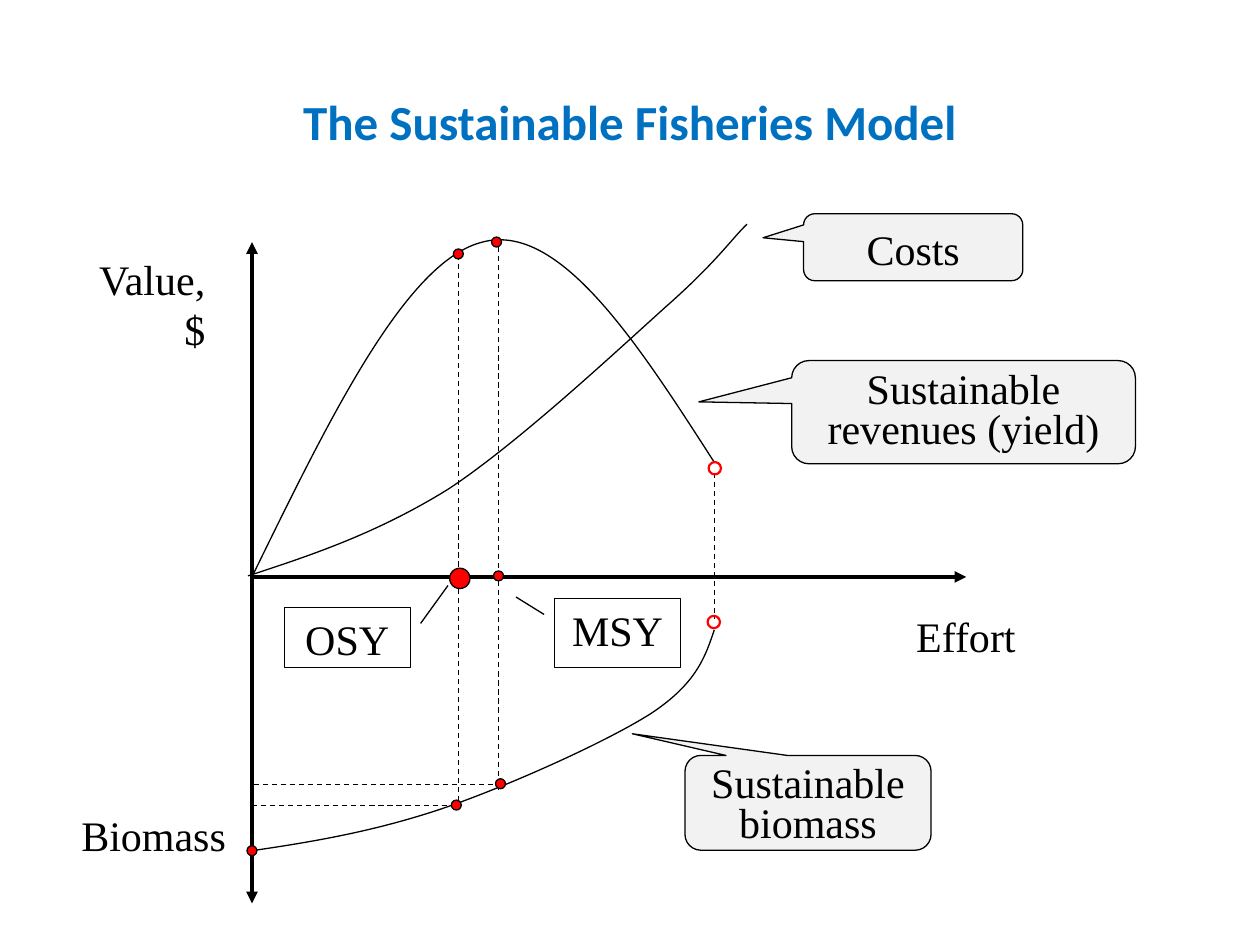
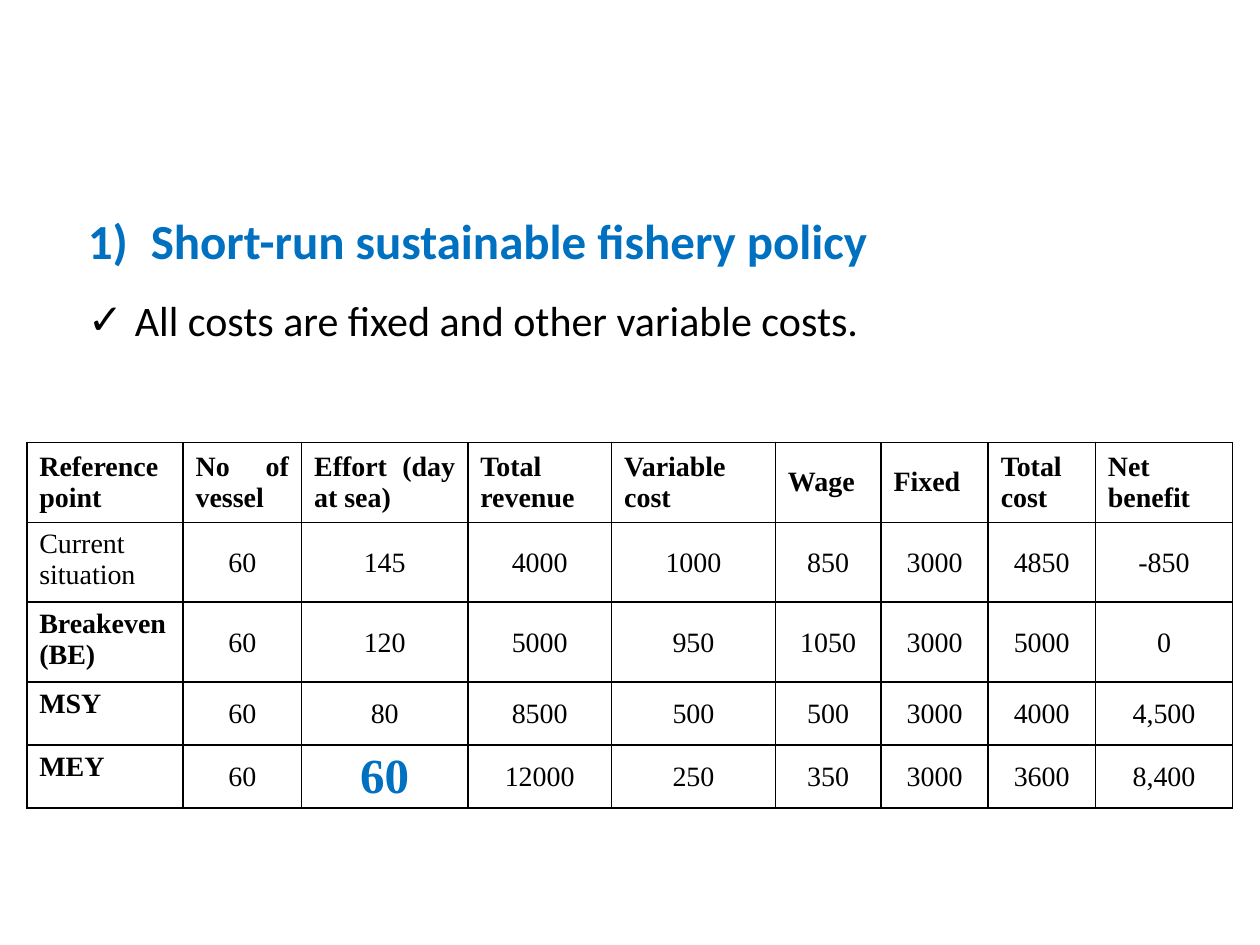
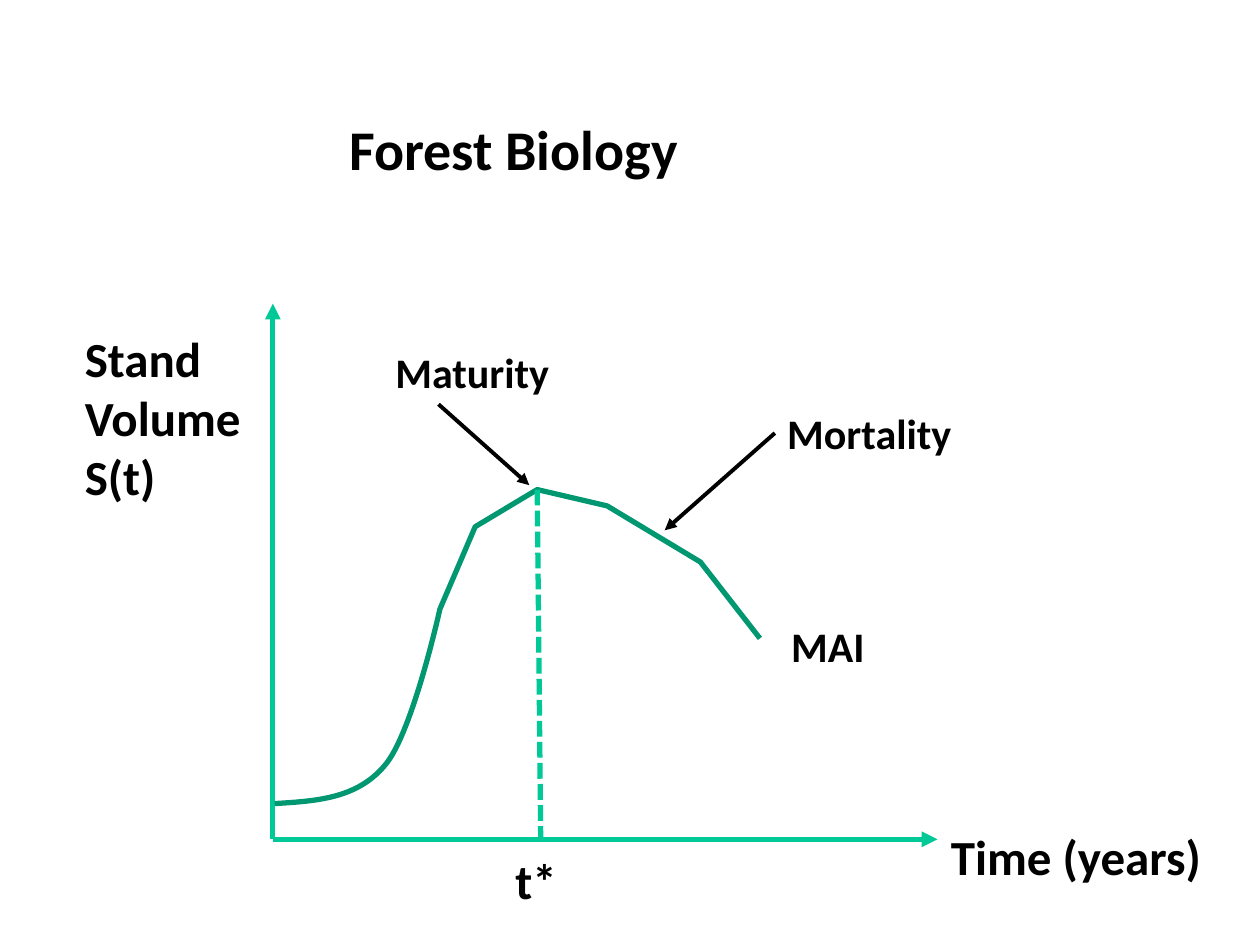
from pptx import Presentation
from pptx.dml.color import RGBColor
from pptx.enum.dml import MSO_LINE
from pptx.enum.shapes import MSO_CONNECTOR, MSO_SHAPE
from pptx.enum.text import MSO_ANCHOR, PP_ALIGN
from pptx.oxml import parse_xml
from pptx.oxml.ns import nsdecls, qn
from pptx.util import Cm, Pt

BLACK = RGBColor(0x00, 0x00, 0x00)
WHITE = RGBColor(0xFF, 0xFF, 0xFF)
BLUE = RGBColor(0x00, 0x70, 0xC0)
RED = RGBColor(0xFF, 0x00, 0x00)
PALE_GREY = RGBColor(0xF2, 0xF2, 0xF2)
AXIS_GREEN = RGBColor(0x00, 0xC8, 0x96)
CURVE_GREEN = RGBColor(0x00, 0x97, 0x71)
SANS = "Calibri"
SERIF = "Times New Roman"

# All places and sizes are in centimetres.
# Fisheries model
EFFORT_AXIS_Y, VALUE_AXIS_X = 11.63, 5.08
OSY_X, MSY_X, COLLAPSE_X = 9.24, 10.05, 14.4
FISHERY_LABELS = [
    (["Value,", "$"], (1.65, 4.98, 2.74, 2.29), PP_ALIGN.RIGHT),
    (["Effort"], (18.22, 12.19, 2.54, 1.27), PP_ALIGN.LEFT),
    (["Biomass"], (1.39, 16.2, 3.43, 1.27), PP_ALIGN.LEFT),
]
# A curve is its start, then segments: one point is straight, three are a Bézier.
REVENUE_CURVE = [
    (VALUE_AXIS_X, EFFORT_AXIS_Y),
    [(6.63, 8.46), (8.18, 5.26), (9.73, 4.88)],
    [(11.28, 4.47), (12.85, 6.91), (COLLAPSE_X, 9.32)],
]
BIOMASS_CURVE = [
    (VALUE_AXIS_X, 17.15),
    [(6.32, 16.97), (7.54, 16.76), (8.89, 16.31)],
    [(10.24, 15.85), (12.22, 14.96), (13.13, 14.38)],
    [(14.05, 13.77), (14.22, 13.23), (COLLAPSE_X, 12.7)],
]
COST_CURVE = [
    (5, 11.61),
    [(6.32, 11.18), (7.62, 10.74), (9.04, 9.86)],
    [(10.44, 8.94), (12.45, 7.06), (13.44, 6.17)],
    [(14.45, 5.28), (14.78, 4.78), (15.06, 4.52)],
]
GUIDES = [
    ((COLLAPSE_X, 9.53), (COLLAPSE_X, 12.47)),
    ((MSY_X, 4.98), (MSY_X, 15.93)),
    ((OSY_X, 5.13), (OSY_X, 16.21)),
    ((5.11, 15.82), (10.01, 15.82)),
    ((VALUE_AXIS_X, 16.24), (OSY_X, 16.24)),
]
COLLAPSE_RINGS = [(14.41, 9.44), (14.39, 12.54)]
DOTS = [(10.01, 4.88), (10.09, 15.8), (5.08, 17.15), (9.2, 16.23),
        (9.24, 5.12), (MSY_X, 11.61)]
OSY_DOT = (9.27, 11.66)
WEDGE, LEADER = MSO_SHAPE.ROUNDED_RECTANGULAR_CALLOUT, MSO_SHAPE.LINE_CALLOUT_1
CALLOUTS = [
    (WEDGE, ["Costs"], (16.2, 4.31, 4.42, 1.35), (-0.685, -0.141, 0.167)),
    (WEDGE, ["Sustainable", "revenues (yield)"], (15.96, 7.27, 6.93, 2.08),
     (-0.77, -0.1, 0.167)),
    (WEDGE, ["Sustainable", "biomass"], (13.81, 15.23, 4.96, 1.91),
     (-0.714, -0.729, 0.167)),
    (LEADER, ["MSY"], (11.18, 12.07, 2.54, 1.39), (0.229, -0.083, -0.025, -0.306)),
    (LEADER, ["OSY"], (5.73, 12.25, 2.54, 1.21), (0.263, 1.083, -0.369, 1.3)),
]

# Short-run policy
POLICY_HEADING = "Short-run sustainable fishery policy"
POLICY_POINT = "All costs are fixed and other variable costs."
POLICY_ROWS = [
    ["Reference point", "No of vessel", "Effort (day at sea)", "Total revenue",
     "Variable cost", "Wage", "Fixed", "Total cost", "Net benefit"],
    ["Current situation", "60", "145", "4000", "1000", "850", "3000", "4850", "-850"],
    ["Breakeven (BE)", "60", "120", "5000", "950", "1050", "3000", "5000", "0"],
    ["MSY", "60", "80", "8500", "500", "500", "3000", "4000", "4,500"],
    ["MEY", "60", "60", "12000", "250", "350", "3000", "3600", "8,400"],
]
POLICY_WIDTHS = [3.15, 2.39, 3.35, 2.9, 3.3, 2.13, 2.16, 2.16, 2.77]
POLICY_HEIGHTS = [1.61, 1.61, 1.61, 1.27, 1.27]
OPTIMAL_EFFORT = (4, 2)

# Forest biology
FOREST_ORIGIN = (5.5, 16.92)
FOREST_AXIS_ENDS = [(18.9, 16.92), (5.5, 6.12)]
MATURITY_POINT = (10.83, 9.87)
VOLUME_CURVE = [
    (5.54, 16.2),
    [(6.38, 16.15), (7.19, 16.1), (7.75, 15.44)],
    [(8.31, 14.81), (8.87, 12.28), (8.87, 12.28)],
    [(9.58, 10.62)], [MATURITY_POINT], [(12.24, 10.2)],
    [(14.12, 11.33)], [(15.32, 12.87)],
]
FOREST_LABELS = [
    (["Forest Biology"], (6.79, 2.18, 7.21, 1.63), 32),
    (["Stand", "Volume", "S(t)"], (1.46, 6.5, 4.32, 4.11), 28),
    (["Time (years)"], (18.92, 16.54, 5.61, 1.45), 28),
    (["t*"], (10.14, 17.02, 1.37, 1.45), 28),
    (["MAI"], (15.7, 12.39, 2.01, 1.27), 24),
    (["Maturity"], (7.72, 6.86, 3.66, 1.27), 24),
    (["Mortality"], (15.62, 8.09, 4.04, 1.27), 24),
]
FOREST_POINTERS = [((8.84, 8.15), (10.67, 9.78)), ((15.62, 8.73), (13.4, 10.69))]


def lengths(values):
    return [Cm(value) for value in values]


def write(paragraph, text, size, font=SERIF, color=BLACK, bold=False,
          align=PP_ALIGN.LEFT):
    paragraph.alignment = align
    run = paragraph.add_run()
    run.text = text
    run.font.size, run.font.name, run.font.bold = Pt(size), font, bold
    run.font.color.rgb = color


def write_lines(frame, lines, size, spacing=None, **style):
    for number, line in enumerate(lines):
        paragraph = frame.add_paragraph() if number else frame.paragraphs[0]
        paragraph.line_spacing = spacing
        write(paragraph, line, size, **style)


def add_label(parent, lines, box, size, wrap=False, **style):
    frame = parent.shapes.add_textbox(*lengths(box)).text_frame
    frame.word_wrap = wrap
    write_lines(frame, lines, size, **style)
    return frame


def add_line(parent, start, end, color, width, dash=None, arrows=()):
    """Draw a line; arrows names the ends ("headEnd", "tailEnd") with a triangle."""
    line = parent.shapes.add_connector(MSO_CONNECTOR.STRAIGHT, *lengths(start + end))
    line.line.color.rgb, line.line.width = color, Pt(width)
    if dash:
        line.line.dash_style = dash
    properties = line.element.spPr
    for arrow in arrows:
        properties.find(qn("a:ln")).append(
            parse_xml(f'<a:{arrow} {nsdecls("a")} type="triangle"/>'))
    properties.append(parse_xml(f'<a:effectLst {nsdecls("a")}/>'))


def paint(shape, fill, line, width):
    shape.shadow.inherit = False
    if fill is None:
        shape.fill.background()
    else:
        shape.fill.solid()
        shape.fill.fore_color.rgb = fill
    shape.line.color.rgb, shape.line.width = line, Pt(width)


def add_curve(parent, curve, color, width):
    """Outline all points with straight steps, then bend each step of three."""
    start, *segments = curve
    builder = parent.shapes.build_freeform(*lengths(start))
    builder.add_line_segments(
        [lengths(point) for segment in segments for point in segment], close=False)
    shape = builder.convert_to_shape()
    steps = iter(list(shape.element.iter(qn("a:lnTo"))))
    for segment in segments:
        first, *others = [next(steps) for _ in segment]
        if others:
            bend = parse_xml(f'<a:cubicBezTo {nsdecls("a")}/>')
            first.addprevious(bend)
            for step in (first, *others):
                bend.append(step[0])
                step.getparent().remove(step)
    paint(shape, None, color, width)


def add_dot(parent, center, diameter, fill, line, width):
    x, y = (value - diameter / 2 for value in center)
    dot = parent.shapes.add_shape(MSO_SHAPE.OVAL,
                                  *lengths((x, y, diameter, diameter)))
    paint(dot, fill, line, width)


def add_callout(parent, kind, lines, box, adjustments):
    callout = parent.shapes.add_shape(kind, *lengths(box))
    for index, value in enumerate(adjustments):
        callout.adjustments[index] = value
    paint(callout, PALE_GREY if kind == WEDGE else WHITE, BLACK, 0.75)
    callout.text_frame.word_wrap = True
    callout.text_frame.vertical_anchor = MSO_ANCHOR.TOP
    write_lines(callout.text_frame, lines, 24, align=PP_ALIGN.CENTER,
                spacing=0.8 if len(lines) > 1 else None)


def set_bullet(paragraph, indent, bullet):
    properties = paragraph._p.get_or_add_pPr()
    properties.set("marL", str(Cm(indent)))
    properties.set("indent", str(-Cm(indent)))
    for part in (f'buFont {nsdecls("a")} typeface="{SANS}"', bullet):
        properties.append(parse_xml(f"<a:{part}/>"))


def add_borders(cell):
    properties = cell._tc.get_or_add_tcPr()
    for position, side in enumerate("LRTB"):
        properties.insert(position, parse_xml(
            f'<a:ln{side} {nsdecls("a")} w="{Pt(1)}"><a:solidFill>'
            f'<a:srgbClr val="{BLACK}"/></a:solidFill></a:ln{side}>'))


def build_fishery_model(slide):
    title = add_label(slide, ["The Sustainable Fisheries Model"],
                      (1.9, 0.84, 21.59, 3.18), 28, wrap=True, font=SANS,
                      color=BLUE, bold=True, align=PP_ALIGN.CENTER)
    title.vertical_anchor = MSO_ANCHOR.MIDDLE
    diagram = slide.shapes.add_group_shape()
    add_line(diagram, (VALUE_AXIS_X, 18.21), (VALUE_AXIS_X, 4.88), BLACK, 2.25,
             arrows=("headEnd", "tailEnd"))
    add_line(diagram, (VALUE_AXIS_X, EFFORT_AXIS_Y), (19.48, EFFORT_AXIS_Y), BLACK,
             2.25, arrows=("tailEnd",))
    for lines, box, align in FISHERY_LABELS:
        add_label(diagram, lines, box, 24, align=align)
    for curve in (REVENUE_CURVE, BIOMASS_CURVE, COST_CURVE):
        add_curve(diagram, curve, BLACK, 0.75)
    for callout in CALLOUTS:
        add_callout(diagram, *callout)
    for start, end in GUIDES:
        add_line(diagram, start, end, BLACK, 0.75, dash=MSO_LINE.DASH)
    for center in COLLAPSE_RINGS:
        add_dot(diagram, center, 0.25, None, RED, 1.25)
    for center in DOTS:
        add_dot(diagram, center, 0.2, RED, BLACK, 0.75)
    add_dot(diagram, OSY_DOT, 0.41, RED, BLACK, 0.75)


def build_policy(slide):
    frame = add_label(slide, [POLICY_HEADING], (1.52, 3.53, 23.8, 9.58), 28,
                      wrap=True, spacing=1.5, font=SANS, color=BLUE, bold=True,
                      align=PP_ALIGN.JUSTIFY)
    point = frame.add_paragraph()
    point.line_spacing = 1.5
    write(point, POLICY_POINT, 24, font=SANS, align=PP_ALIGN.JUSTIFY)
    set_bullet(frame.paragraphs[0], 1.27,
               f'buAutoNum {nsdecls("a")} type="arabicParenR"')
    set_bullet(point, 0.95, f'buChar {nsdecls("a")} char="✓"')

    table = slide.shapes.add_table(
        len(POLICY_ROWS), len(POLICY_WIDTHS),
        *lengths((0.54, 8.92, sum(POLICY_WIDTHS), sum(POLICY_HEIGHTS)))).table
    table.first_row = table.horz_banding = False
    for column, width in zip(table.columns, POLICY_WIDTHS):
        column.width = Cm(width)
    for row, height in zip(table.rows, POLICY_HEIGHTS):
        row.height = Cm(height)
    for r, values in enumerate(POLICY_ROWS):
        for c, value in enumerate(values):
            cell = table.cell(r, c)
            cell.fill.background()
            add_borders(cell)
            is_figure = r > 0 and c > 0
            is_optimal = (r, c) == OPTIMAL_EFFORT
            if r == 0 or is_figure:
                cell.vertical_anchor = MSO_ANCHOR.MIDDLE
            if is_figure:
                cell.margin_left = cell.margin_right = cell.margin_top = Cm(0.03)
                cell.margin_bottom = 0
            write(cell.text_frame.paragraphs[0], value, 28 if is_optimal else 16,
                  color=BLUE if is_optimal else BLACK,
                  bold=is_optimal or r == 0 or (c == 0 and r > 1),
                  align=PP_ALIGN.CENTER if is_figure else PP_ALIGN.JUSTIFY)


def build_forest_biology(slide):
    for end in FOREST_AXIS_ENDS:
        add_line(slide, FOREST_ORIGIN, end, AXIS_GREEN, 3, arrows=("tailEnd",))
    add_curve(slide, VOLUME_CURVE, CURVE_GREEN, 3)
    for lines, box, size in FOREST_LABELS:
        add_label(slide, lines, box, size, font=SANS, bold=True)
    for start, end in FOREST_POINTERS:
        add_line(slide, start, end, BLACK, 2.25, arrows=("tailEnd",))
    add_line(slide, MATURITY_POINT, (10.9, FOREST_ORIGIN[1]), AXIS_GREEN, 3,
             dash=MSO_LINE.SQUARE_DOT)


def main():
    presentation = Presentation()
    presentation.slide_width, presentation.slide_height = Cm(25.4), Cm(19.05)
    blank = presentation.slide_layouts[6]
    for build in (build_fishery_model, build_policy, build_forest_biology):
        build(presentation.slides.add_slide(blank))
    presentation.save("out.pptx")


if __name__ == "__main__":
    main()
